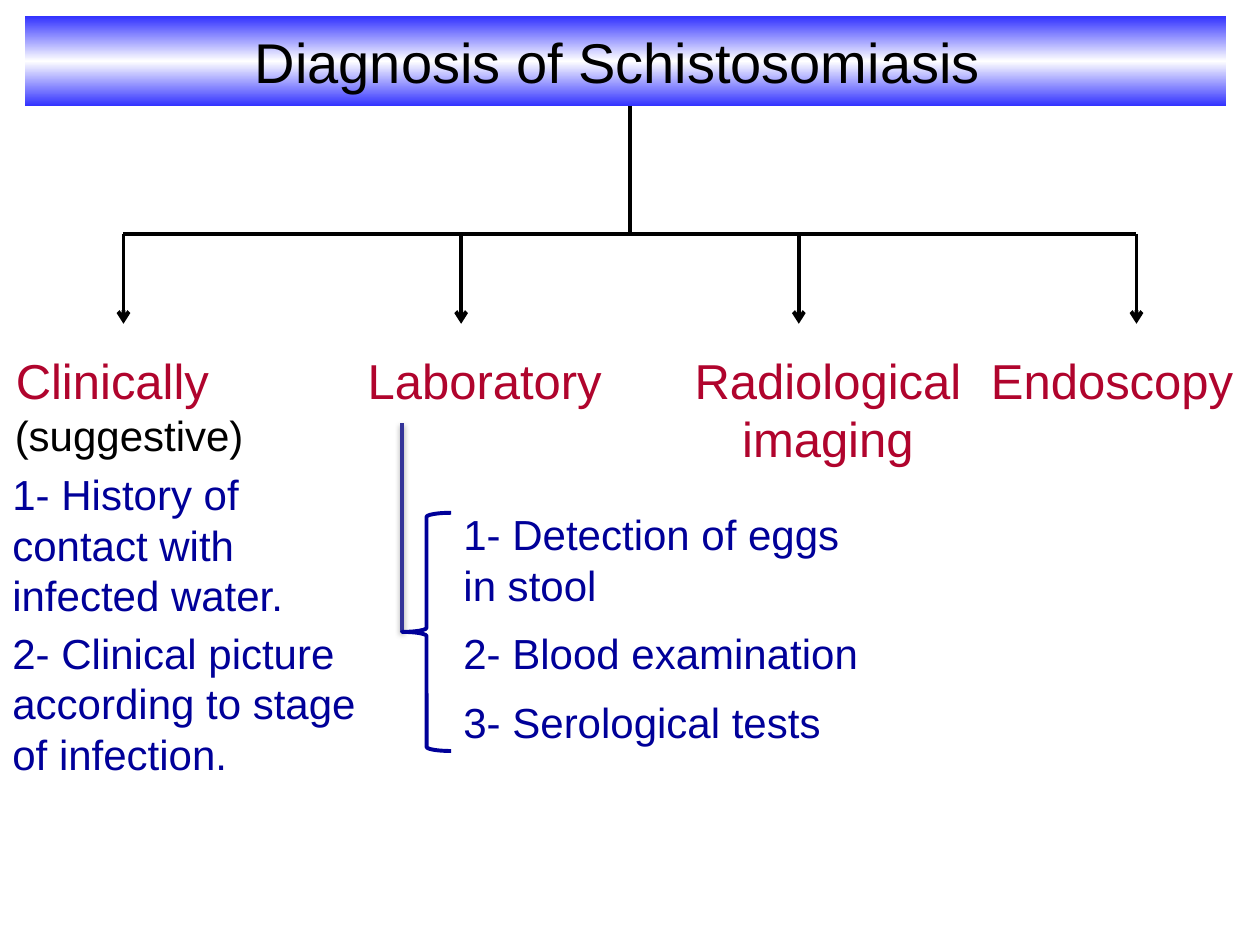
from copy import deepcopy
from dataclasses import dataclass

from pptx import Presentation
from pptx.dml.color import RGBColor
from pptx.enum.shapes import MSO_CONNECTOR, MSO_SHAPE
from pptx.enum.text import MSO_ANCHOR, MSO_AUTO_SIZE, PP_ALIGN
from pptx.oxml.ns import qn
from pptx.util import Inches, Pt

STRAIGHT = MSO_CONNECTOR.STRAIGHT
LEFT_BRACE = MSO_SHAPE.LEFT_BRACE
MIDDLE = MSO_ANCHOR.MIDDLE
FIT_SHAPE = MSO_AUTO_SIZE.SHAPE_TO_FIT_TEXT
NO_FIT = MSO_AUTO_SIZE.NONE
LEFT, CENTER = PP_ALIGN.LEFT, PP_ALIGN.CENTER
LEFT_SIDE = 1
TITLE_ONLY = 5


@dataclass(frozen=True)
class Theme:
    font: str = "Arial"
    black: RGBColor = RGBColor(0x00, 0x00, 0x00)
    white: RGBColor = RGBColor(0xFF, 0xFF, 0xFF)
    banner: RGBColor = RGBColor(0x33, 0x33, 0xFF)
    heading: RGBColor = RGBColor(0xB0, 0x04, 0x2D)
    detail: RGBColor = RGBColor(0x00, 0x00, 0x99)
    stem: RGBColor = RGBColor(0x33, 0x33, 0x99)
    title_size: float = 32
    heading_size: float = 28
    detail_size: float = 24
    line_width: float = 2.25
    stem_width: float = 2


@dataclass(frozen=True)
class Label:
    text: str
    left: float
    top: float
    width: float
    height: float


THEME = Theme()
TRUNK_X, TITLE_BOTTOM = 5, 0.84
BAR_Y, ARROW_END = 1.86, 2.57
BAR_LEFT, BAR_RIGHT = 0.98, 9.02
HEADING_TOP = 2.73

HEADINGS = [
    Label("Clinically ", 0, HEADING_TOP, 1.89, 0.57),
    Label("Laboratory ", 2.64, HEADING_TOP, 2.52, 0.57),
    Label("Radiological imaging", 5.31, HEADING_TOP, 2.52, 1.04),
    Label("Endoscopy ", 7.76, HEADING_TOP, 2.24, 0.57),
]
SUGGESTIVE = Label("(suggestive)", 0, 3.2, 2.05, 0.51)
DETAILS = [
    Label("1- History of contact with infected water.", 0, 3.67, 2.36, 1.31),
    Label("2- Clinical picture according to stage of infection.", 0, 4.93, 2.95, 1.31),
    Label("1- Detection of eggs in stool", 3.58, 3.99, 3.47, 0.91),
    Label("2- Blood examination", 3.58, 4.93, 3.47, 0.51),
    Label("3- Serological tests", 3.58, 5.48, 3.47, 0.51),
]


def write(frame, text: str, size: float, color: RGBColor, align) -> None:
    """Put one formatted paragraph into a text frame."""
    frame.text = text
    frame.word_wrap = True
    para = frame.paragraphs[0]
    para.alignment = align
    for span in para.runs:
        span.font.name = THEME.font
        span.font.size = Pt(size)
        span.font.color.rgb = color


def add_title(page, text: str) -> None:
    title = page.shapes.title
    title.left, title.top = Inches(0.2), Inches(0.13)
    title.width, title.height = Inches(9.53), Inches(0.71)
    # Mirrored gradient: banner blue, white, banner blue
    title.fill.gradient()
    title.fill.gradient_angle = 90
    stop_list = title._element.spPr.find(".//" + qn("a:gsLst"))
    stop_list.append(deepcopy(stop_list[0]))
    colors = (THEME.banner, THEME.white, THEME.banner)
    for index, (stop, color) in enumerate(zip(title.fill.gradient_stops, colors)):
        stop.position = index / 2
        stop.color.rgb = color
    write(title.text_frame, text, THEME.title_size, THEME.black, CENTER)
    title.text_frame.vertical_anchor = MIDDLE
    title.text_frame.auto_size = NO_FIT


def add_label(page, label: Label, size: float, color: RGBColor, align) -> None:
    box = page.shapes.add_textbox(Inches(label.left), Inches(label.top),
                                  Inches(label.width), Inches(label.height))
    write(box.text_frame, label.text, size, color, align)
    box.text_frame.auto_size = FIT_SHAPE


def add_line(page, start: tuple[float, float], end: tuple[float, float],
             color: RGBColor = THEME.black, width: float = THEME.line_width,
             arrow: bool = False):
    line = page.shapes.add_connector(STRAIGHT, Inches(start[0]), Inches(start[1]),
                                     Inches(end[0]), Inches(end[1]))
    line.line.color.rgb = color
    line.line.width = Pt(width)
    properties = line._element.spPr
    if arrow:
        outline = properties.find(qn("a:ln"))
        outline.append(outline.makeelement(qn("a:tailEnd"), {"type": "arrow"}))
    properties.append(properties.makeelement(qn("a:effectLst"), {}))
    return line


def add_soft_shadow(line) -> None:
    effects = line._element.spPr.find(qn("a:effectLst"))
    shadow = effects.makeelement(qn("a:outerShdw"), {
        "blurRad": str(Pt(3.1)), "dist": str(Pt(1.6)),
        "dir": str(90 * 60000), "rotWithShape": "0"})
    color = shadow.makeelement(qn("a:srgbClr"), {"val": str(THEME.black)})
    color.append(color.makeelement(qn("a:alpha"), {"val": "38000"}))
    shadow.append(color)
    effects.append(shadow)


def add_brace(page):
    brace = page.shapes.add_shape(LEFT_BRACE, Inches(3.19), Inches(4.07),
                                  Inches(0.39), Inches(1.89))
    brace.shadow.inherit = False
    brace.fill.background()
    brace.line.color.rgb = THEME.detail
    brace.line.width = Pt(THEME.line_width)
    return brace


def main() -> None:
    deck = Presentation()
    deck.slide_width, deck.slide_height = Inches(10), Inches(7.5)
    page = deck.slides.add_slide(deck.slide_layouts[TITLE_ONLY])
    add_title(page, "Diagnosis of Schistosomiasis ")

    # Tree: trunk, crossbar and one evenly spaced arrow per heading
    add_line(page, (TRUNK_X, TITLE_BOTTOM), (TRUNK_X, BAR_Y))
    add_line(page, (BAR_LEFT, BAR_Y), (BAR_RIGHT, BAR_Y))
    gap = (BAR_RIGHT - BAR_LEFT) / (len(HEADINGS) - 1)
    for index, heading in enumerate(HEADINGS):
        x = BAR_LEFT + index * gap
        add_line(page, (x, BAR_Y), (x, ARROW_END), arrow=True)
        add_label(page, heading, THEME.heading_size, THEME.heading, CENTER)

    # Clinical and laboratory details
    add_label(page, SUGGESTIVE, THEME.detail_size, THEME.black, CENTER)
    for detail in DETAILS:
        add_label(page, detail, THEME.detail_size, THEME.detail, LEFT)

    # Stem from the laboratory heading to its brace
    stem = add_line(page, (3.19, 3.36), (3.19, 5.01), THEME.stem, THEME.stem_width)
    add_soft_shadow(stem)
    brace = add_brace(page)
    stem.end_connect(brace, LEFT_SIDE)

    deck.save("out.pptx")


if __name__ == "__main__":
    main()
